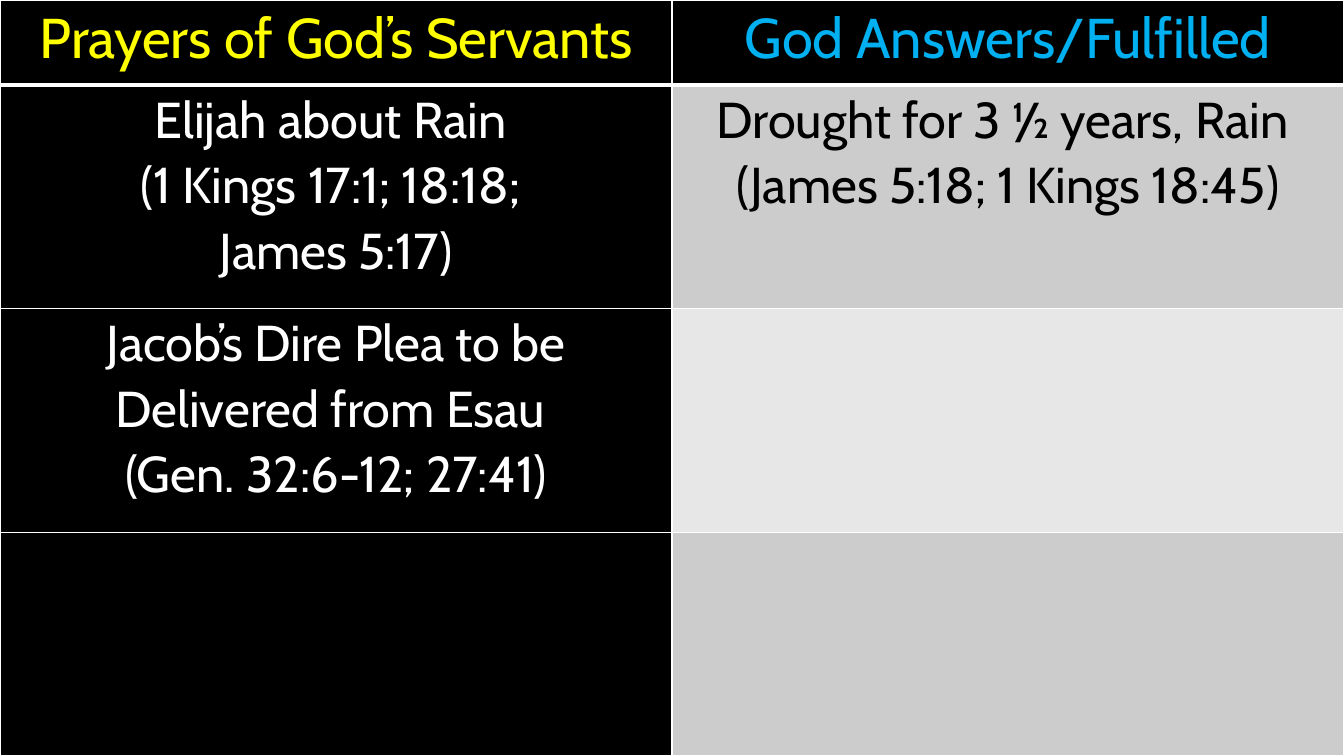
from dataclasses import dataclass

from lxml.etree import SubElement
from pptx import Presentation
from pptx.dml.color import RGBColor
from pptx.enum.text import PP_ALIGN as Align
from pptx.oxml.ns import qn
from pptx.util import Emu, Pt

PX = 9525  # EMU per px, at 96 px to the inch
COLUMN_WIDTH = 640
ROW_HEIGHTS = [81, 213, 213, 213]
SIDE_MARGIN = 7
BLACK, WHITE, YELLOW, BLUE = "000000", "FFFFFF", "FFFF00", "00B0F0"
DARK_BAND, LIGHT_BAND = "CCCCCC", "E7E7E7"


@dataclass
class CellContent:
    fill: str
    lines: tuple[str, ...] = ()
    color: str = WHITE
    size: int = 36


ROWS = [
    [CellContent(BLACK, ("Prayers of God’s Servants",), YELLOW, 40),
     CellContent(BLACK, ("God Answers/Fulfilled",), BLUE, 40)],
    [CellContent(BLACK, ("Elijah about Rain ", "(1 Kings 17:1; 18:18; ", "James 5:17)")),
     CellContent(DARK_BAND, ("Drought for 3 ½ years, Rain ", "(James 5:18; 1 Kings 18:45)"), BLACK)],
    [CellContent(BLACK, ("Jacob’s Dire Plea to be Delivered from Esau ", "(Gen. 32:6-12; 27:41)")),
     CellContent(LIGHT_BAND)],
    [CellContent(BLACK), CellContent(DARK_BAND)],
]


def px(length: int) -> Emu:
    return Emu(length * PX)


def rgb(color: str) -> RGBColor:
    return RGBColor.from_string(color)


def write_text(text_frame, lines: tuple[str, ...], *, color: str, size: int,
               font: str = "Cabin", spacing: float = 1.07) -> None:
    for index, line in enumerate(lines):
        paragraph = text_frame.paragraphs[0] if index == 0 else text_frame.add_paragraph()
        paragraph.alignment = Align.CENTER
        paragraph.line_spacing = spacing
        paragraph.space_before = paragraph.space_after = Pt(0)
        run = paragraph.add_run()
        run.text = line
        run.font.name = font
        run.font.size = Pt(size)
        run.font.bold = False
        run.font.color.rgb = rgb(color)


def add_borders(cell, widths: dict[str, int], color: str = WHITE) -> None:
    """Add cell borders; they must come before the cell's fill."""
    properties = cell._tc.get_or_add_tcPr()
    for side in ("L", "R", "T", "B"):
        line = SubElement(properties, qn(f"a:ln{side}"), w=str(Pt(widths.get(side, 1))))
        fill = SubElement(line, qn("a:solidFill"))
        SubElement(fill, qn("a:srgbClr"), val=color)


def draw_cell(cell, content: CellContent, border_widths: dict[str, int]) -> None:
    cell.margin_left = cell.margin_right = px(SIDE_MARGIN)
    cell.margin_top = cell.margin_bottom = 0
    add_borders(cell, border_widths)
    cell.fill.solid()
    cell.fill.fore_color.rgb = rgb(content.fill)
    write_text(cell.text_frame, content.lines, color=content.color, size=content.size)


def main() -> None:
    presentation = Presentation()
    width, height = px(2 * COLUMN_WIDTH), px(sum(ROW_HEIGHTS))
    presentation.slide_width, presentation.slide_height = width, height
    slide = presentation.slides.add_slide(presentation.slide_layouts[6])
    slide.background.fill.solid()
    slide.background.fill.fore_color.rgb = rgb(BLACK)

    # Table over the whole slide
    table = slide.shapes.add_table(len(ROWS), 2, 0, 0, width, height).table
    for column in table.columns:
        column.width = px(COLUMN_WIDTH)
    for row, row_height in zip(table.rows, ROW_HEIGHTS):
        row.height = px(row_height)

    # Cells, with a thick rule under the header
    header_rule = {0: {"B": 3}, 1: {"T": 3}}
    for row_index, contents in enumerate(ROWS):
        for column_index, content in enumerate(contents):
            draw_cell(table.cell(row_index, column_index), content,
                      header_rule.get(row_index, {}))

    presentation.save("out.pptx")


if __name__ == "__main__":
    main()
